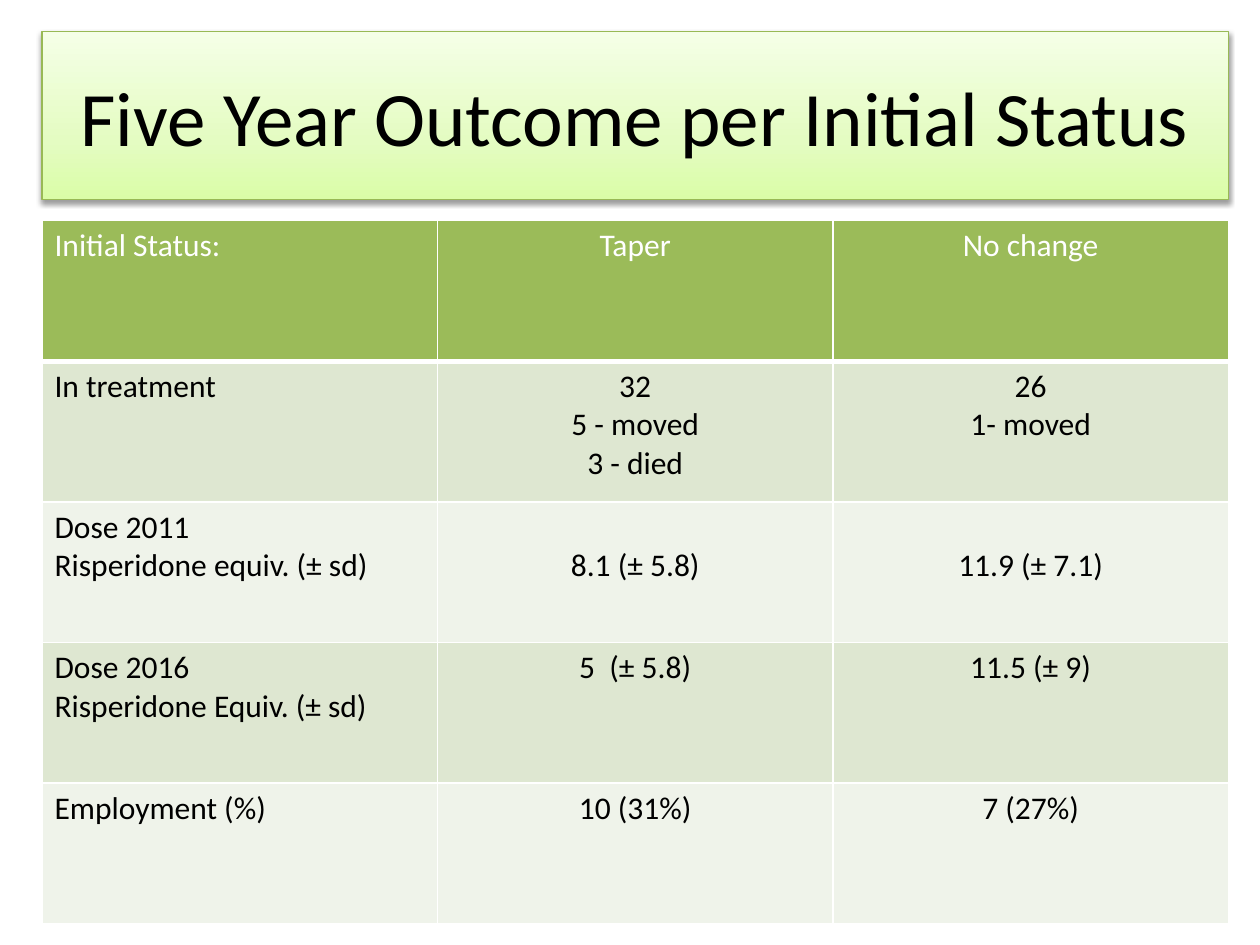
import copy

from lxml import etree
from pptx import Presentation
from pptx.dml.color import RGBColor
from pptx.enum import text
from pptx.oxml import ns
from pptx.util import Pt

BLACK = RGBColor(0x00, 0x00, 0x00)
WHITE = RGBColor(0xFF, 0xFF, 0xFF)
HEADER_GREEN = RGBColor(0x9B, 0xBB, 0x59)
BAND_DARK = RGBColor(0xDE, 0xE7, 0xD1)
BAND_LIGHT = RGBColor(0xEF, 0xF3, 0xEA)
TITLE_EDGE = RGBColor(0x98, 0xB9, 0x55)
TITLE_STOPS = [
    (0, RGBColor(0xDA, 0xFD, 0xA7)),
    (0.35, RGBColor(0xE4, 0xFC, 0xC2)),
    (1, RGBColor(0xF5, 0xFF, 0xE7)),
]

LEFT, WIDTH = 24, 678
LINE_HEIGHT = 22

OUTCOMES = [
    ["Initial Status:", "Taper", "No change"],
    ["In treatment", "32\n5 - moved\n3 - died", "26\n1- moved"],
    ["Dose 2011\nRisperidone equiv. (± sd)", "8.1 (± 5.8)", "11.9 (± 7.1)"],
    ["Dose 2016\nRisperidone Equiv. (± sd)", "5  (± 5.8)", "11.5 (± 9)"],
    ["Employment (%)", "10 (31%)", "7 (27%)"],
]
DOSE_2011_ROW = 2


def add_xml(parent, tag, **attributes):
    return etree.SubElement(parent, ns.qn(tag), attributes)


class SlideStyle:
    font = "Calibri"

    def __init__(self, slide):
        self.slide = slide

    def set_text(self, frame, wording, size, color, align):
        frame.text = wording
        values = {"name": self.font, "size": Pt(size), "bold": False}
        for paragraph in frame.paragraphs:
            paragraph.alignment = align
            for run in paragraph.runs:
                for key, value in values.items():
                    setattr(run.font, key, value)
                run.font.color.rgb = color

    def title(self, wording, top, height):
        heading = self.slide.shapes.title
        box = {"left": LEFT, "top": top, "width": WIDTH, "height": height}
        for key, value in box.items():
            setattr(heading, key, Pt(value))
        self.set_text(heading.text_frame, wording, 44, BLACK, text.PP_ALIGN.CENTER)
        heading.text_frame.vertical_anchor = text.MSO_ANCHOR.MIDDLE

        # Three-stop gradient, running upwards
        heading.fill.gradient()
        heading.fill.gradient_angle = 90
        properties = heading.element.spPr
        stop_list = properties.find(ns.qn("a:gradFill")).find(ns.qn("a:gsLst"))
        stop_list.append(copy.deepcopy(stop_list[0]))
        for stop, (position, color) in zip(heading.fill.gradient_stops, TITLE_STOPS):
            stop.position = position
            stop.color.rgb = color
        heading.line.color.rgb = TITLE_EDGE
        heading.line.width = Pt(0.75)

        # Soft shadow below
        heading.shadow.inherit = False
        effects = properties.find(ns.qn("a:effectLst"))
        shadow = add_xml(effects, "a:outerShdw", blurRad=str(Pt(3.1)),
                         dist=str(Pt(1.6)), dir="5400000", rotWithShape="0")
        shade = add_xml(shadow, "a:srgbClr", val=str(BLACK))
        add_xml(shade, "a:alpha", val="38000")

    def borders(self, cell, bottom=1):
        properties = cell._tc.get_or_add_tcPr()
        for side, width in {"L": 1, "R": 1, "T": 1, "B": bottom}.items():
            edge = add_xml(properties, f"a:ln{side}", w=str(Pt(width)))
            add_xml(add_xml(edge, "a:solidFill"), "a:srgbClr", val=str(WHITE))

    def table(self, rows, top, height):
        grid = self.slide.shapes.add_table(
            len(rows), len(rows[0]), Pt(LEFT), Pt(top), Pt(WIDTH), Pt(height)).table
        for r, row in enumerate(rows):
            header = r == 0
            band = BAND_DARK if r % 2 else BAND_LIGHT
            for c, wording in enumerate(row):
                cell = grid.cell(r, c)
                self.set_text(cell.text_frame, wording, 18, WHITE if header else BLACK,
                              text.PP_ALIGN.CENTER if c else text.PP_ALIGN.LEFT)
                self.borders(cell, bottom=3 if header else 1)
                cell.fill.solid()
                cell.fill.fore_color.rgb = HEADER_GREEN if header else band
        return grid


def main():
    deck = Presentation()
    deck.slide_width, deck.slide_height = Pt(720), Pt(540)
    style = SlideStyle(deck.slides.add_slide(deck.slide_layouts[5]))

    # Heading
    style.title("Five Year Outcome per Initial Status", 18, 96)

    # Outcome table, with the 2011 doses level with their label's second line
    outcomes = style.table(OUTCOMES, 126, 402)
    for column in (1, 2):
        outcomes.cell(DOSE_2011_ROW, column).margin_top = Pt(3.6 + LINE_HEIGHT)

    deck.save("out.pptx")


if __name__ == "__main__":
    main()
